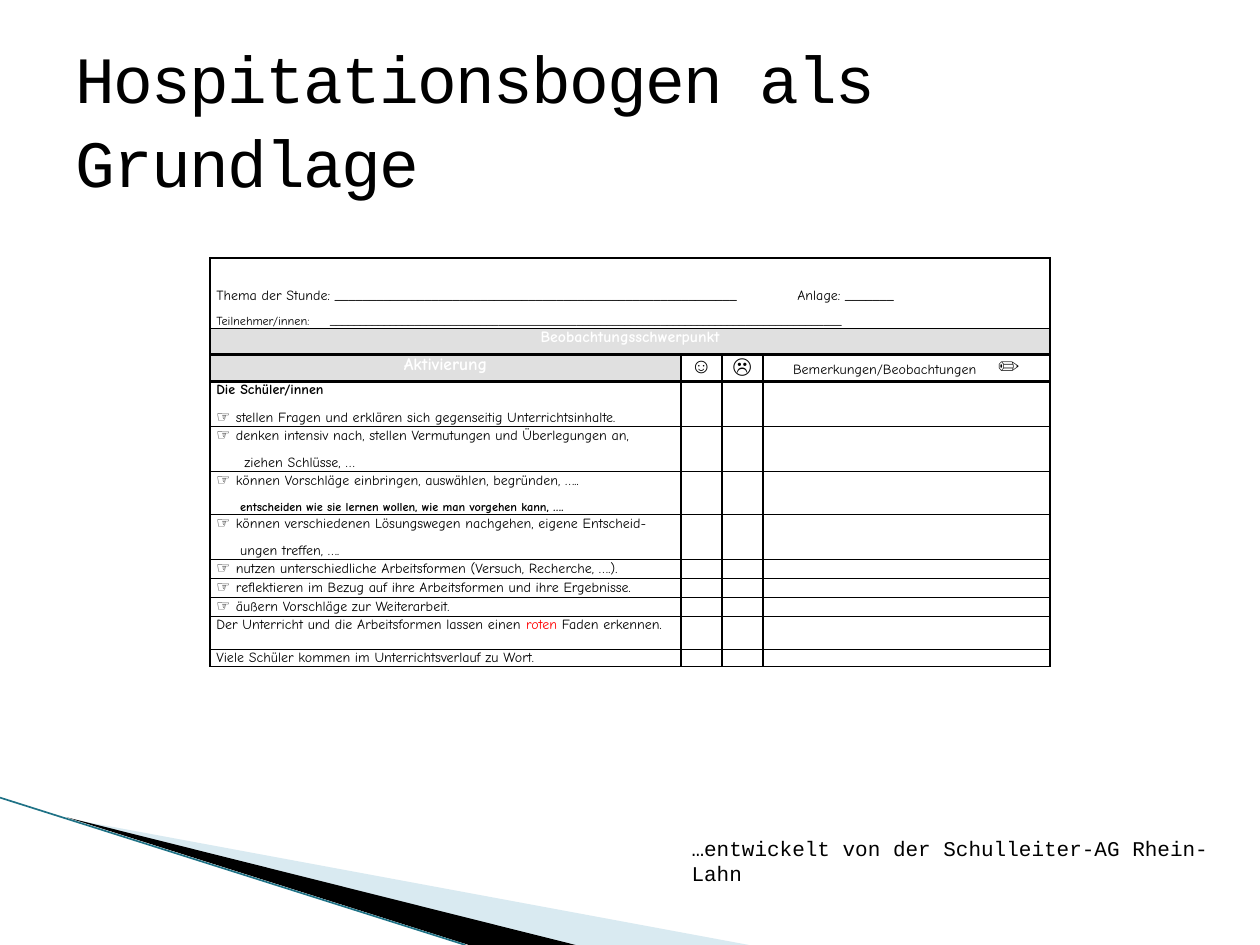
from dataclasses import dataclass, field
from typing import Optional

from lxml.etree import SubElement
from pptx import Presentation
from pptx.dml.color import RGBColor
from pptx.enum.shapes import MSO_CONNECTOR
from pptx.enum.text import MSO_ANCHOR, MSO_AUTO_SIZE, PP_ALIGN
from pptx.oxml.ns import qn
from pptx.util import Pt


@dataclass(frozen=True)
class Theme:
    black: str = "000000"
    white: str = "FFFFFF"
    red: str = "FF0000"
    band: str = "E0E0E0"
    pale_wedge: str = "A0CBDC"
    edge: str = "1F7286"
    heading_font: str = "Courier New"
    form_font: str = "Comic Neue"
    symbol_font: str = "Arial"
    title: float = 37.8
    credit: float = 12
    small: float = 7
    form: float = 8
    hand: float = 9
    activity: float = 10
    face: float = 12
    pencil: float = 13


THEME = Theme()


@dataclass
class Span:
    text: str
    size: float = THEME.form
    bold: bool = False
    color: str = THEME.black
    font: str = THEME.form_font


@dataclass
class Para:
    spans: list[Span]
    align: PP_ALIGN = PP_ALIGN.LEFT
    indent: float = 0
    tab: Optional[float] = None


@dataclass
class Entry:
    paras: list[Para] = field(default_factory=list)
    fill: Optional[str] = None
    left: float = 3.6
    top: float = 0


def write_spans(para, spans: list[Span]) -> None:
    for item in spans:
        span = para.add_run()
        span.text = item.text
        span.font.size = Pt(item.size)
        span.font.bold = item.bold
        span.font.name = item.font
        span.font.color.rgb = RGBColor.from_string(item.color)


def write_paras(frame, paras: list[Para]) -> None:
    for number, item in enumerate(paras):
        para = frame.add_paragraph() if number else frame.paragraphs[0]
        properties = para._p.get_or_add_pPr()
        if item.tab:
            tabs = SubElement(properties, qn("a:tabLst"))
            SubElement(tabs, qn("a:tab"), pos=str(Pt(item.tab)), algn="l")
        if item.indent:
            properties.set("marL", str(Pt(item.indent)))
        para.alignment = item.align
        if number:
            para.space_before = Pt(3)
        para.space_after = Pt(3)
        write_spans(para, item.spans)


def draw_borders(cell, widths: dict[str, float]) -> None:
    properties = cell._tc.get_or_add_tcPr()
    for side, width in widths.items():
        line = SubElement(properties, qn(f"a:ln{side}"), w=str(Pt(width)))
        paint = SubElement(line, qn("a:solidFill"))
        SubElement(paint, qn("a:srgbClr"), val=THEME.black)


def fill_cell(cell, entry: Entry) -> None:
    cell.margin_left, cell.margin_right = Pt(entry.left), Pt(3.6)
    cell.margin_top, cell.margin_bottom = Pt(entry.top), Pt(0)
    if entry.fill:
        cell.fill.solid()
        cell.fill.fore_color.rgb = RGBColor.from_string(entry.fill)
    else:
        cell.fill.background()
    if entry.paras:
        write_paras(cell.text_frame, entry.paras)
    else:
        # Small end mark keeps an empty cell from stretching its row
        SubElement(cell.text_frame.paragraphs[0]._p, qn("a:endParaRPr"), sz="700")


def draw_wedge(page, points: list[tuple[float, float]], color: str, opacity: int = 100) -> None:
    builder = page.shapes.build_freeform(*points[0], scale=Pt(1))
    builder.add_line_segments(points[1:], close=True)
    wedge = builder.convert_to_shape()
    wedge.shadow.inherit = False
    wedge.line.fill.background()
    wedge.fill.solid()
    wedge.fill.fore_color.rgb = RGBColor.from_string(color)
    if opacity < 100:
        paint = wedge._element.spPr.find(qn("a:solidFill"))
        SubElement(paint[0], qn("a:alpha"), val=str(opacity * 1000))


def centred(text: str, size: float, color: str = THEME.black, font: str = THEME.form_font) -> list[Para]:
    return [Para([Span(text, size, True, color, font)], PP_ALIGN.CENTER)]


def pointed(text: str) -> Para:
    return Para([Span("☞ ", THEME.hand, True), Span(text)])


def observation(height: float, *paras: Para) -> tuple[float, list[Entry]]:
    return height, [Entry(list(paras)), Entry(), Entry(), Entry()]


# Each row: height and entries; a single entry spans the whole width
ROWS = [
    (38.3, [Entry([
        Para([Span("Thema der Stunde: " + "_" * 58 + "\tAnlage: _______")], tab=332),
        Para([Span("Teilnehmer/innen:\t" + "_" * 85, THEME.small)], tab=65),
    ], top=17)]),
    (14.9, [Entry(centred("Beobachtungsschwerpunkt", THEME.hand, THEME.white), THEME.band)]),
    (15.4, [
        Entry(centred("Aktivierung", THEME.activity, THEME.white), THEME.band),
        Entry(centred("☺", THEME.face, font=THEME.symbol_font)),
        Entry(centred("☹", THEME.face)),
        Entry([Para([Span("Bemerkungen/Beobachtungen\t"),
                     Span("✏", THEME.pencil, True)], tab=117)], left=17.3),
    ]),
    observation(25.7, Para([Span("Die Schüler/innen", bold=True)]),
                pointed("stellen Fragen und erklären sich gegenseitig Unterrichtsinhalte.")),
    observation(25.7, pointed("denken intensiv nach, stellen Vermutungen und Überlegungen an,"),
                Para([Span("ziehen Schlüsse, …")], indent=16)),
    observation(24.6, pointed("können Vorschläge einbringen, auswählen, begründen, ….."),
                Para([Span("entscheiden wie sie lernen wollen, wie man vorgehen kann, ….",
                           THEME.small, True)], indent=13.7)),
    observation(25.7, pointed("können verschiedenen Lösungswegen nachgehen, eigene Entscheid-"),
                Para([Span("ungen treffen, ….")], indent=13.7)),
    observation(10.9, pointed("nutzen unterschiedliche Arbeitsformen (Versuch, Recherche, ….).")),
    observation(10.9, pointed("reflektieren im Bezug auf ihre Arbeitsformen und ihre Ergebnisse.")),
    observation(10.9, pointed("äußern Vorschläge zur Weiterarbeit.")),
    observation(18.9, Para([Span("Der Unterricht und die Arbeitsformen lassen einen "),
                            Span("roten", color=THEME.red), Span(" Faden erkennen.")])),
    observation(9.7, Para([Span("Viele Schüler kommen im Unterrichtsverlauf zu Wort.")])),
]
COLUMNS = [269.1, 23.4, 23.4, 164.1]
VERTICAL_RULES = [1, 1.5, 1, 1.5, 1.5]
HORIZONTAL_RULES = [1.5, 1, 1.5, 1.5] + [1] * 9


def draw_form(page) -> None:
    heights = [height for height, _ in ROWS]
    table = page.shapes.add_table(len(ROWS), len(COLUMNS), Pt(120), Pt(147.4),
                                  Pt(sum(COLUMNS)), Pt(sum(heights))).table
    table.first_row = table.horz_banding = False
    for column, width in zip(table.columns, COLUMNS):
        column.width = Pt(width)
    for r, (height, entries) in enumerate(ROWS):
        table.rows[r].height = Pt(height)
        if len(entries) == 1:
            table.cell(r, 0).merge(table.cell(r, len(COLUMNS) - 1))
        for c in range(len(COLUMNS)):
            cell = table.cell(r, c)
            right = len(COLUMNS) if len(entries) == 1 else c + 1
            draw_borders(cell, {"L": VERTICAL_RULES[c], "R": VERTICAL_RULES[right],
                                "T": HORIZONTAL_RULES[r], "B": HORIZONTAL_RULES[r + 1]})
            fill_cell(cell, entries[c] if c < len(entries) else Entry())


def main() -> None:
    deck = Presentation()
    deck.slide_width, deck.slide_height = Pt(720), Pt(540)
    page = deck.slides.add_slide(deck.slide_layouts[5])

    # Corner decoration
    draw_wedge(page, [(39.6, 468), (428.4, 540), (328.3, 540)], THEME.pale_wedge, 40)
    draw_wedge(page, [(38.2, 467.3), (329, 540), (267.8, 540)], THEME.black)
    edge = page.shapes.add_connector(MSO_CONNECTOR.STRAIGHT, Pt(0), Pt(455.8), Pt(266), Pt(540))
    edge.line.color.rgb = RGBColor.from_string(THEME.edge)
    edge.line.width = Pt(0.95)
    SubElement(edge._element.spPr, qn("a:effectLst"))

    # Title
    title = page.shapes.title
    title.left, title.top, title.width, title.height = Pt(36), Pt(21.6), Pt(648), Pt(90)
    frame = title.text_frame
    frame.auto_size = MSO_AUTO_SIZE.NONE
    frame.vertical_anchor = MSO_ANCHOR.MIDDLE
    para = frame.paragraphs[0]
    para.alignment = PP_ALIGN.LEFT
    para.line_spacing = 1.06
    write_spans(para, [Span("Hospitationsbogen als Grundlage", THEME.title, font=THEME.heading_font)])
    para.runs[0].font._element.set("spc", "-100")

    draw_form(page)

    # Credit line
    box = page.shapes.add_textbox(Pt(388.1), Pt(473.8), Pt(317.5), Pt(21.6))
    box.text_frame.word_wrap = True
    write_spans(box.text_frame.paragraphs[0], [Span("…entwickelt von der Schulleiter-AG Rhein-Lahn",
                                                    THEME.credit, font=THEME.heading_font)])
    deck.save("out.pptx")


if __name__ == "__main__":
    main()
